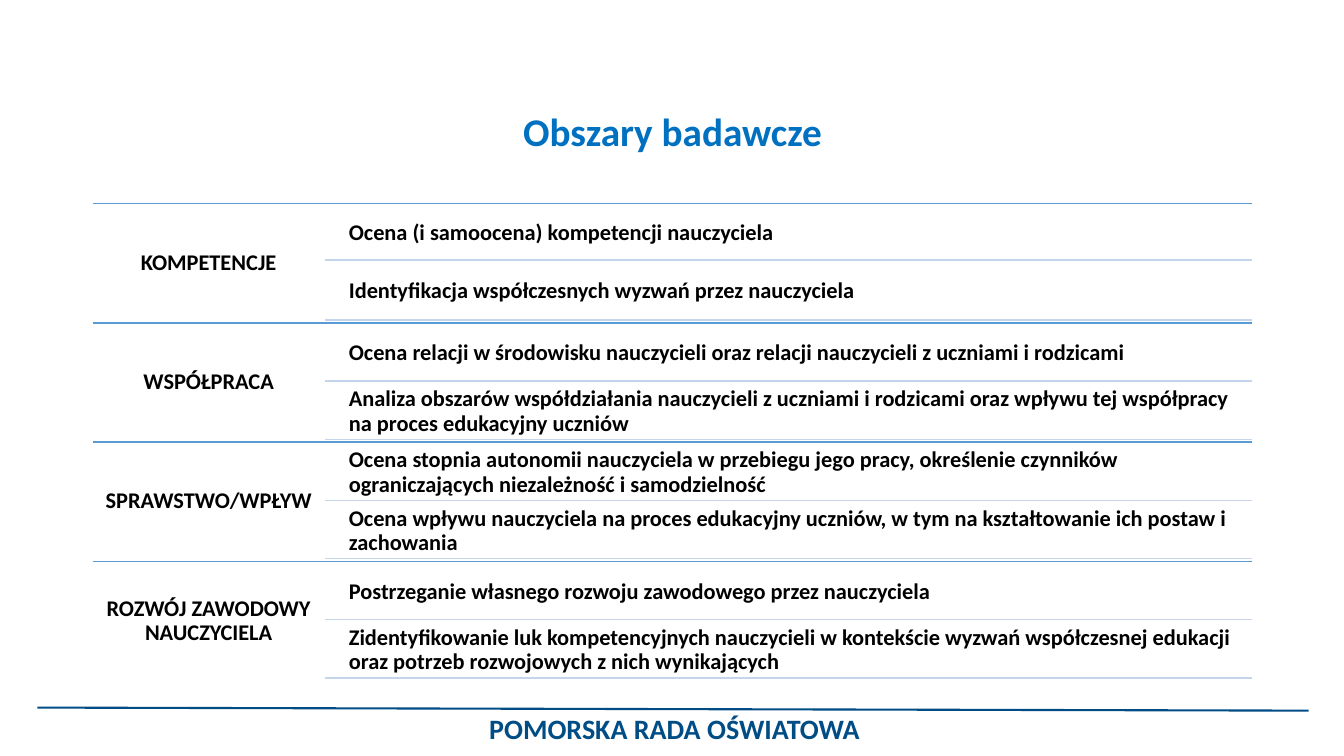
"""Builds the slide listing the research areas and their questions."""
from dataclasses import dataclass

from lxml import etree
from pptx import Presentation
from pptx.dml.color import RGBColor
from pptx.enum.shapes import MSO_CONNECTOR as Connector
from pptx.enum.text import MSO_ANCHOR as Anchor, PP_ALIGN as Align
from pptx.oxml.ns import qn
from pptx.slide import Slide
from pptx.util import Inches, Pt

WIDTH, HEIGHT = 13.33, 7.5
LEFT, RIGHT, TOP = 0.92, 12.42, 2.02
ROW = 1.183
LABEL_WIDTH = (RIGHT - LEFT) / 5
QUESTION_INDENT = 0.17
GAP = 0.028
INSET = 0.07

NAVY, BLUE, BLACK = "004D86", "0070C0", "000000"
AREA_LINE, QUESTION_LINE = "5B9BD5", "C4D5EB"


@dataclass(frozen=True)
class Area:
    label: str
    questions: tuple[str, str]
    heights: tuple[float, float] = (0.55, 0.55)


@dataclass(frozen=True)
class Style:
    size: float
    color: str
    align: Align = Align.CENTER
    anchor: Anchor = Anchor.MIDDLE
    spacing: float = 0.9
    inset: float | None = None


TITLE = Style(28, BLUE)
FOOTER = Style(20, NAVY, anchor=Anchor.TOP, spacing=1.0)
LABEL = Style(16, BLACK, inset=INSET)
QUESTION = Style(16, BLACK, align=Align.LEFT, inset=INSET)

AREAS = (
    Area("KOMPETENCJE", (
        "Ocena (i samoocena) kompetencji nauczyciela",
        "Identyfikacja współczesnych wyzwań przez nauczyciela",
    ), (0.53, 0.57)),
    Area("WSPÓŁPRACA", (
        "Ocena relacji w środowisku nauczycieli oraz relacji nauczycieli z uczniami i rodzicami",
        "Analiza obszarów współdziałania nauczycieli z uczniami i rodzicami "
        "oraz wpływu tej współpracy na proces edukacyjny uczniów",
    )),
    Area("SPRAWSTWO/WPŁYW", (
        "Ocena stopnia autonomii nauczyciela w przebiegu jego pracy, "
        "określenie czynników ograniczających niezależność i samodzielność",
        "Ocena wpływu nauczyciela na proces edukacyjny uczniów, "
        "w tym na kształtowanie ich postaw i zachowania",
    )),
    Area("ROZWÓJ ZAWODOWY NAUCZYCIELA", (
        "Postrzeganie własnego rozwoju zawodowego przez nauczyciela",
        "Zidentyfikowanie luk kompetencyjnych nauczycieli w kontekście wyzwań "
        "współczesnej edukacji oraz potrzeb rozwojowych z nich wynikających",
    )),
)


def rgb(value: str) -> RGBColor:
    return RGBColor.from_string(value)


def apply(target: object, values: dict[str, object]) -> None:
    for name, value in values.items():
        setattr(target, name, value)


def add_text(page: Slide, text: str, style: Style, left: float, top: float,
             width: float, height: float) -> None:
    box = page.shapes.add_textbox(*map(Inches, (left, top, width, height)))
    frame = box.text_frame
    apply(frame, {"word_wrap": True, "vertical_anchor": style.anchor})
    if style.inset is not None:
        sides = ("left", "top", "right", "bottom")
        apply(frame, {f"margin_{side}": Inches(style.inset) for side in sides})
    para = frame.paragraphs[0]
    apply(para, {"alignment": style.align, "line_spacing": style.spacing})
    span = para.add_run()
    span.text = text
    apply(span.font, {"name": "Calibri", "size": Pt(style.size), "bold": True})
    span.font.color.rgb = rgb(style.color)


def add_line(page: Slide, left: float, top: float, right: float, bottom: float,
             color: str, weight: float = 1) -> None:
    ends = map(Inches, (left, top, right, bottom))
    line = page.shapes.add_connector(Connector.STRAIGHT, *ends)
    line.line.color.rgb = rgb(color)
    line.line.width = Pt(weight)
    etree.SubElement(line._element.spPr, qn("a:effectLst"))


def add_area(page: Slide, area: Area, top: float) -> None:
    column = LEFT + LABEL_WIDTH
    text_left = column + QUESTION_INDENT
    add_line(page, LEFT, top, RIGHT, top, AREA_LINE)
    add_text(page, area.label, LABEL, LEFT, top, LABEL_WIDTH, ROW)
    bottom = top
    for question, height in zip(area.questions, area.heights):
        start = bottom + GAP
        bottom = start + height
        add_text(page, question, QUESTION, text_left, start, RIGHT - text_left, height)
        add_line(page, column, bottom, RIGHT, bottom, QUESTION_LINE)


def main() -> None:
    deck = Presentation()
    apply(deck, {"slide_width": Inches(WIDTH), "slide_height": Inches(HEIGHT)})
    page = deck.slides.add_slide(deck.slide_layouts[6])
    add_text(page, "POMORSKA RADA OŚWIATOWA", FOOTER, 4.13, 7.01, 5.12, 0.44)
    add_line(page, 0.37, 7.02, 12.98, 7.05, NAVY, 1.5)
    add_text(page, "Obszary badawcze", TITLE, LEFT, 0.95, RIGHT - LEFT, 0.75)
    for index, area in enumerate(AREAS):
        add_area(page, area, TOP + index * ROW)
    deck.save("out.pptx")


if __name__ == "__main__":
    main()
